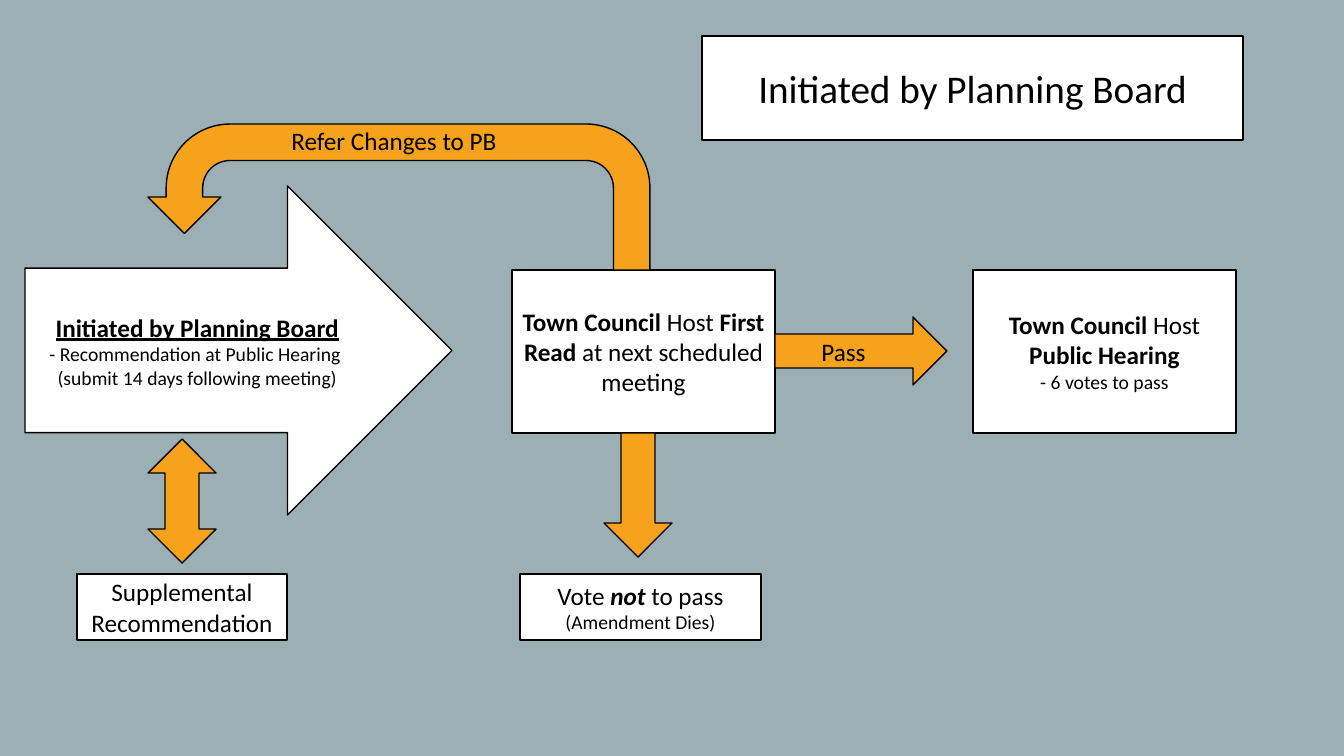
from dataclasses import dataclass, field

from pptx import Presentation
from pptx import util as u
from pptx.dml.color import RGBColor
from pptx.enum import shapes, text

SLIDE_WIDTH, SLIDE_HEIGHT = 1344, 756
EMU_PER_PX = 12192000 / SLIDE_WIDTH
FONT = "Calibri"
COLOURS = {"background": "9BAFB5", "box": "FFFFFF", "arrow": "F6A21D", "ink": "000000"}
KIND = shapes.MSO_SHAPE

BOLD = {"bold": True}
BOLD_ITALIC = {"bold": True, "italic": True}
HEADING = {"bold": True, "underline": True}
SMALL = {"size": u.Pt(14)}
TITLE = {"size": u.Pt(28)}


@dataclass
class Span:
    words: str
    style: dict = field(default_factory=dict)


Lines = list[list[Span]]


@dataclass
class Figure:
    kind: KIND
    place: tuple[int, int, int, int]
    fill: str
    lines: Lines = field(default_factory=list)
    rotation: int = 0
    mirrored: bool = False


@dataclass
class Label:
    place: tuple[int, int, int, int]
    words: str


FIGURES = [
    Figure(KIND.RIGHT_ARROW, (25, 186, 427, 329), "box", [
        [Span("Initiated by Planning Board", HEADING)],
        [Span("- Recommendation at Public Hearing ", SMALL)],
        [Span("(submit 14 days following meeting)", SMALL)],
    ]),
    Figure(KIND.RECTANGLE, (512, 270, 263, 163), "box", [
        [Span("Town Council ", BOLD), Span("Host "), Span("First Read ", BOLD),
         Span("at next scheduled meeting")],
    ]),
    Figure(KIND.U_TURN_ARROW, (148, 124, 502, 146), "arrow", mirrored=True),
    Figure(KIND.RIGHT_ARROW, (775, 317, 172, 68), "arrow"),
    Figure(KIND.RECTANGLE, (973, 270, 263, 163), "box", [
        [Span("Town Council ", BOLD), Span("Host "), Span("Public Hearing", BOLD)],
        [Span("- 6 votes to pass", SMALL)],
    ]),
    Figure(KIND.UP_DOWN_ARROW, (148, 439, 68, 124), "arrow", rotation=180),
    Figure(KIND.RECTANGLE, (77, 574, 210, 66), "box", [
        [Span("Supplemental Recommendation")],
    ]),
    Figure(KIND.RIGHT_ARROW, (576, 461, 124, 68), "arrow", rotation=90),
    Figure(KIND.RECTANGLE, (520, 574, 241, 66), "box", [
        [Span("Vote "), Span("not ", BOLD_ITALIC), Span("to pass")],
        [Span("(Amendment Dies)", SMALL)],
    ]),
    Figure(KIND.RECTANGLE, (702, 36, 541, 104), "box", [
        [Span("Initiated by Planning Board", TITLE)],
    ]),
]

LABELS = [
    Label((277, 120, 234, 40), "Refer Changes to PB"),
    Label((741, 331, 205, 40), "Pass"),
]


def px(length: int) -> int:
    return round(length * EMU_PER_PX)


def colour(name: str) -> RGBColor:
    return RGBColor.from_string(COLOURS[name])


def write_lines(frame, lines: Lines) -> None:
    frame.word_wrap = True
    for index, line in enumerate(lines):
        para = frame.paragraphs[0] if index == 0 else frame.add_paragraph()
        para.alignment = text.PP_ALIGN.CENTER
        for span in line:
            run = para.add_run()
            run.text = span.words
            run.font.color.rgb = colour("ink")
            for name, value in ({"name": FONT, "size": u.Pt(18)} | span.style).items():
                setattr(run.font, name, value)


def draw_figure(page, figure: Figure) -> None:
    shape = page.shapes.add_shape(figure.kind, *map(px, figure.place))
    shape.shadow.inherit = False
    shape.rotation = figure.rotation
    shape.fill.solid()
    shape.fill.fore_color.rgb = colour(figure.fill)
    shape.line.color.rgb = colour("ink")
    shape.line.width = u.Pt(1)
    if figure.mirrored:
        shape.element.spPr.xfrm.set("flipH", "1")
    shape.text_frame.vertical_anchor = text.MSO_ANCHOR.MIDDLE
    write_lines(shape.text_frame, figure.lines)


def draw_label(page, label: Label) -> None:
    box = page.shapes.add_textbox(*map(px, label.place))
    box.text_frame.auto_size = text.MSO_AUTO_SIZE.SHAPE_TO_FIT_TEXT
    write_lines(box.text_frame, [[Span(label.words)]])


def main() -> None:
    deck = Presentation()
    deck.slide_width, deck.slide_height = px(SLIDE_WIDTH), px(SLIDE_HEIGHT)
    page = deck.slides.add_slide(deck.slide_layouts[6])
    page.background.fill.solid()
    page.background.fill.fore_color.rgb = colour("background")

    # Boxes and arrows of the flow, then the words lying on the arrows
    for figure in FIGURES:
        draw_figure(page, figure)
    for label in LABELS:
        draw_label(page, label)

    deck.save("out.pptx")


if __name__ == "__main__":
    main()
